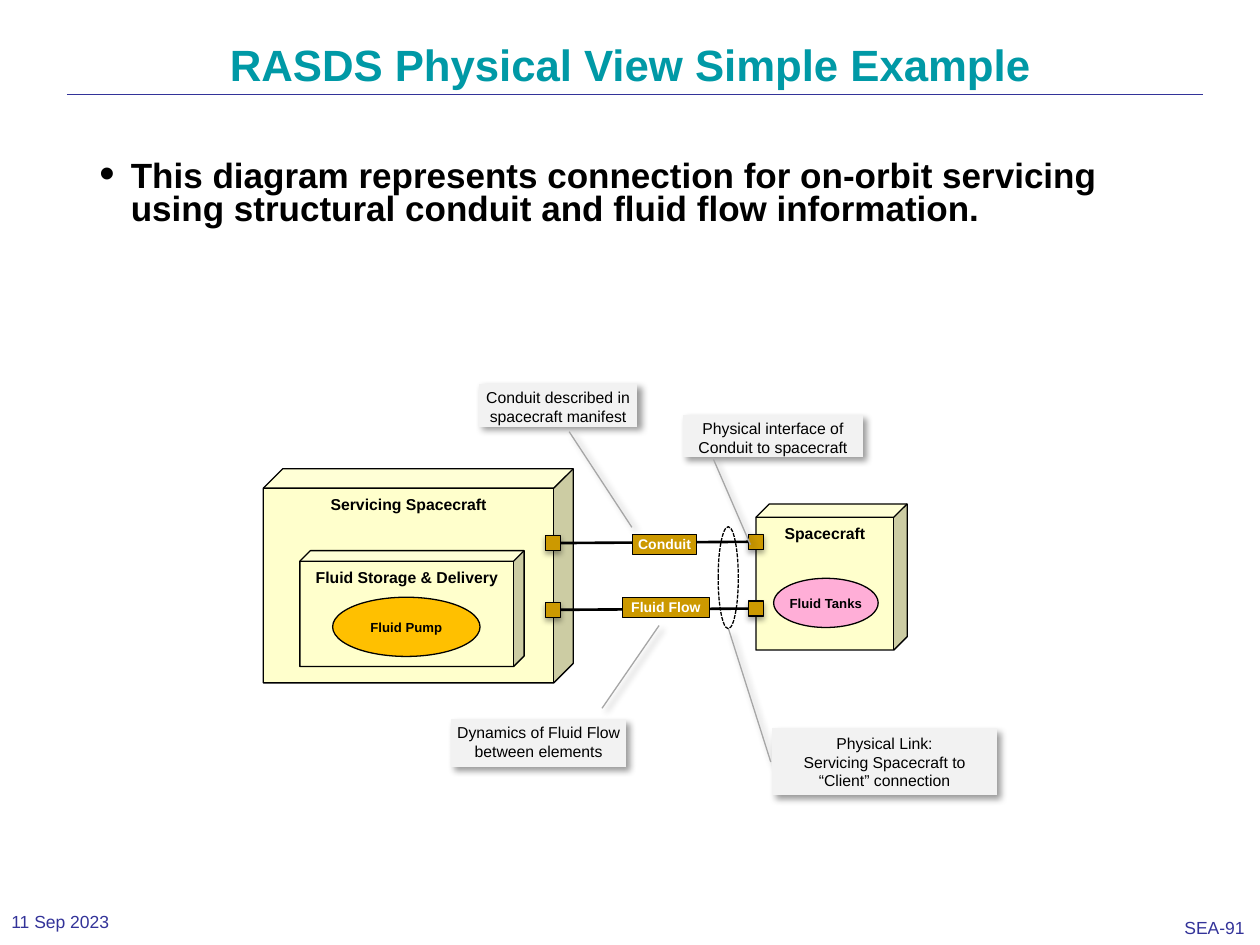
import pptx
import pptx.dml.color
import pptx.enum.dml
import pptx.enum.shapes
import pptx.enum.text
import pptx.oxml
import pptx.oxml.ns
import pptx.util
from lxml import etree
from pptx.util import Inches

SHAPE = pptx.enum.shapes.MSO_SHAPE
ALIGN = pptx.enum.text.PP_ALIGN
ANCHOR = pptx.enum.text.MSO_ANCHOR
COLORS = {
    "title": "0099A6",
    "footer": "333399",
    "black": "000000",
    "white": "FFFFFF",
    "element": "FFFFCC",
    "port": "CC9900",
    "pump": "FFC000",
    "tanks": "FFAED7",
    "note": "F2F2F2",
    "leader": "A6A6A6",
}
PORT_SIZE = 0.12
PORT_SHADOW = {"alpha": 35, "blur": 3.1, "distance": 1.8, "angle": 90}
NOTE_SHADOW = {"alpha": 40, "blur": 4, "distance": 3, "angle": 45}


def rgb(name):
    return pptx.dml.color.RGBColor.from_string(COLORS[name])


def add_child(parent, tag, **attributes):
    child = etree.SubElement(parent, pptx.oxml.ns.qn(tag))
    for key, value in attributes.items():
        child.set(key, str(value))
    return child


def write(shape, text, size=9, color="black", bold=False, align=ALIGN.CENTER,
          anchor=ANCHOR.TOP, margins=(0.1, 0.05), wrap=True, spacing=None):
    frame = shape.text_frame
    frame.word_wrap = wrap
    frame.vertical_anchor = anchor
    frame.margin_left = frame.margin_right = Inches(margins[0])
    frame.margin_top = frame.margin_bottom = Inches(margins[1])
    paragraph = frame.paragraphs[0]
    paragraph.text = text
    paragraph.alignment = align
    if spacing:
        paragraph.line_spacing = spacing
    for run in paragraph.runs:
        run.font.name = "Arial"
        run.font.size = pptx.util.Pt(size)
        run.font.bold = bold
        run.font.color.rgb = rgb(color)
    return paragraph


def add_text(slide, box, text, **text_format):
    textbox = slide.shapes.add_textbox(*map(Inches, box))
    return write(textbox, text, **text_format)


def add_bullet(paragraph):
    properties = paragraph._p.get_or_add_pPr()
    properties.set("marL", str(Inches(0.25)))
    properties.set("indent", str(Inches(-0.25)))
    add_child(properties, "a:buSzPct", val=125000)
    add_child(properties, "a:buFont", typeface="Arial")
    add_child(properties, "a:buChar", char="•")


def add_shadow(shape, alpha, blur, distance, angle):
    effects = shape._element.spPr.find(pptx.oxml.ns.qn("a:effectLst"))
    shadow = add_child(effects, "a:outerShdw", blurRad=pptx.util.Pt(blur),
                       dist=pptx.util.Pt(distance), dir=angle * 60000,
                       algn="tl", rotWithShape=0)
    color = add_child(shadow, "a:srgbClr", val=COLORS["black"])
    add_child(color, "a:alpha", val=alpha * 1000)


def add_part(shapes, kind, box, fill=None, line="black"):
    part = shapes.add_shape(kind, *map(Inches, box))
    part.shadow.inherit = False
    if fill:
        part.fill.solid()
        part.fill.fore_color.rgb = rgb(fill)
    else:
        part.fill.background()
    part.line.color.rgb = rgb(line)
    part.line.width = pptx.util.Pt(0.75)
    return part


def add_element(shapes, box, text):
    cube = add_part(shapes, SHAPE.CUBE, box, "element")
    cube.adjustments[0] = 0.091
    write(cube, text, bold=True, margins=(0, 0.05))


def add_component(shapes, box, text, fill):
    oval = add_part(shapes, SHAPE.OVAL, box, fill)
    write(oval, text, size=7.5, bold=True, anchor=ANCHOR.MIDDLE, wrap=False)


def add_port(slide, left, top):
    port = add_part(slide.shapes, SHAPE.RECTANGLE,
                    (left, top, PORT_SIZE, PORT_SIZE), "port")
    add_shadow(port, **PORT_SHADOW)
    return port


def add_line(slide, start, end, color, width):
    line = slide.shapes.add_connector(
        pptx.enum.shapes.MSO_CONNECTOR.STRAIGHT, *map(Inches, start + end))
    line.line.color.rgb = rgb(color)
    line.line.width = pptx.util.Pt(width)
    add_child(line._element.spPr, "a:effectLst")
    return line


def add_link(slide, left_top, right_top, label_box, text):
    servicer_port = add_port(slide, 4.33, left_top)
    client_port = add_port(slide, 5.94, right_top)
    link = add_line(slide, (4.45, left_top + PORT_SIZE / 2),
                    (5.94, right_top + PORT_SIZE / 2), "black", 1.5)
    link.begin_connect(servicer_port, 3)
    link.end_connect(client_port, 1)
    label = add_part(slide.shapes, SHAPE.RECTANGLE, label_box, "port")
    write(label, text, size=8, color="white", bold=True, margins=(0.01, 0.01))


def add_note(slide, box, text, leader, margin=0.03):
    note = add_part(slide.shapes, SHAPE.LINE_CALLOUT_1_NO_BORDER, box,
                    "note", "leader")
    note._element.spPr.find(pptx.oxml.ns.qn("a:xfrm")).set("flipH", "1")
    for index, value in enumerate(leader):
        note.adjustments[index] = value
    add_shadow(note, **NOTE_SHADOW)
    write(note, text, margins=(margin, margin))


def main():
    deck = pptx.Presentation()
    deck.slide_width, deck.slide_height = Inches(10), Inches(7.5)
    slide = deck.slides.add_slide(deck.slide_layouts[5])

    add_line(slide, (0.53, 0.75), (9.55, 0.75), "footer", 0.13)
    title = slide.shapes.title
    title.left, title.top, title.width, title.height = map(
        Inches, (0.5, 0.3, 9, 1.25))
    write(title, "RASDS Physical View Simple Example", size=25,
          color="title", bold=True, spacing=0.9)
    add_bullet(add_text(
        slide, (0.69, 1.23, 8.62, 0.87),
        "This diagram represents connection for on-orbit servicing using "
        "structural conduit and fluid flow information.",
        size=20, bold=True, align=ALIGN.LEFT, spacing=0.8))

    add_element(slide.shapes, (2.09, 3.72, 2.46, 1.7), "Servicing Spacecraft")
    add_element(slide.shapes, (6, 4, 1.2, 1.16), "Spacecraft")
    storage = slide.shapes.add_group_shape().shapes
    add_element(storage, (2.38, 4.37, 1.78, 0.92), "Fluid Storage & Delivery")
    add_component(storage, (2.64, 4.74, 1.17, 0.47), "Fluid Pump", "pump")
    add_component(slide.shapes, (6.14, 4.59, 0.83, 0.39), "Fluid Tanks", "tanks")

    add_link(slide, 4.78, 4.77, (4.94, 4.74, 0.69, 0.16), "Fluid Flow")
    add_link(slide, 4.25, 4.24, (5.02, 4.24, 0.51, 0.16), "Conduit")

    add_note(slide, (3.8, 3.05, 1.26, 0.34),
             "Conduit described in spacecraft manifest",
             (1.107, 0.43, 3.338, 0.035))
    add_note(slide, (3.58, 5.71, 1.39, 0.38),
             "Dynamics of Fluid Flow between elements",
             (-0.234, 0.138, -1.962, -0.188))
    add_note(slide, (5.42, 3.29, 1.43, 0.34),
             "Physical interface of Conduit to spacecraft",
             (1.046, 0.83, 3.036, 0.625))
    add_note(slide, (6.13, 5.78, 1.78, 0.53),
             "Physical Link:\vServicing Spacecraft to “Client” connection",
             (0.506, 1.007, -1.483, 1.195), margin=0.04)

    physical_link = add_part(slide.shapes, SHAPE.OVAL, (5.7, 4.18, 0.16, 0.81))
    physical_link.line.dash_style = pptx.enum.dml.MSO_LINE.SQUARE_DOT

    footer = {"size": 10, "color": "footer", "align": ALIGN.LEFT, "wrap": False}
    add_text(slide, (0, 7.17, 1.89, 0.29), "11 Sep 2023",
             anchor=ANCHOR.MIDDLE, margins=(0.09, 0.05), **footer)
    add_text(slide, (9.31, 7.24, 0.68, 0.26), "SEA-91",
             margins=(0.09, 0.04), **footer)
    deck.save("out.pptx")


if __name__ == "__main__":
    main()
